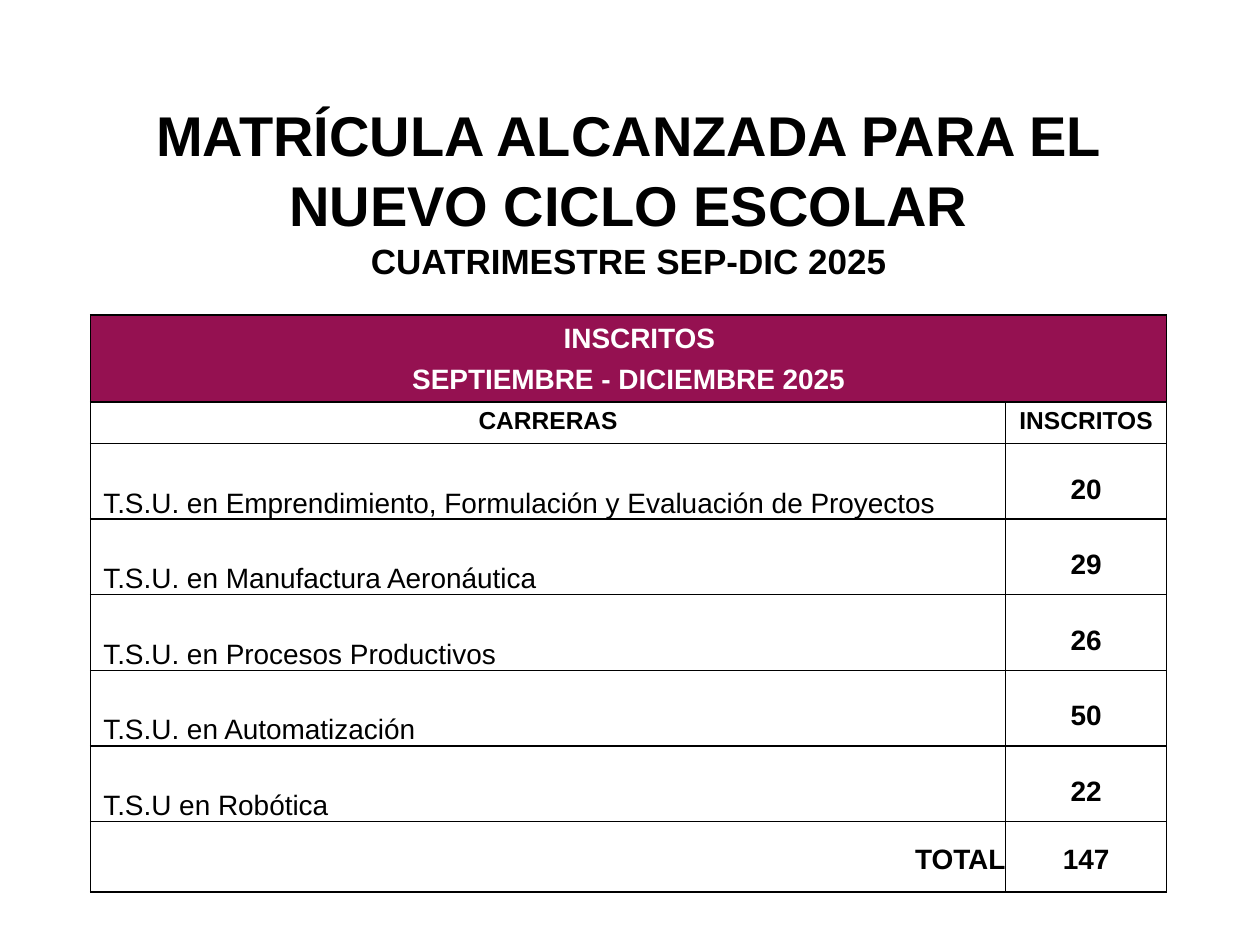
from lxml import etree
from pptx import Presentation
from pptx.dml.color import RGBColor
from pptx.enum.text import MSO_ANCHOR, MSO_AUTO_SIZE, PP_ALIGN
from pptx.oxml.ns import qn
from pptx.util import Inches, Pt

LEFT, MID, RIGHT = PP_ALIGN.LEFT, PP_ALIGN.CENTER, PP_ALIGN.RIGHT
TOP, CENTER, BASE = MSO_ANCHOR.TOP, MSO_ANCHOR.MIDDLE, MSO_ANCHOR.BOTTOM
BLACK = RGBColor(0, 0, 0)
WHITE = RGBColor(255, 255, 255)
WINE = RGBColor(0x95, 0x11, 0x51)

COURSES = [
    ("T.S.U. en Emprendimiento, Formulación y Evaluación de Proyectos", 20),
    ("T.S.U. en Manufactura Aeronáutica", 29),
    ("T.S.U. en Procesos Productivos", 26),
    ("T.S.U. en Automatización", 50),
    ("T.S.U en Robótica", 22),
]


class Deck:
    font = "Arial"

    def __init__(self):
        self.prs = Presentation()
        self.prs.slide_width, self.prs.slide_height = Inches(10), Inches(7.5)
        self.slide = self.prs.slides.add_slide(self.prs.slide_layouts[5])

    def style(self, par, size, color=BLACK, bold=True, align=MID):
        par.alignment = align
        for run in par.runs:
            font = run.font
            font.name, font.size, font.bold = self.font, Pt(size), bold
            font.color.rgb = color

    def title(self, lines, sizes, left, top, width, height):
        shape = self.slide.shapes.title
        shape.left, shape.top = Inches(left), Inches(top)
        shape.width, shape.height = Inches(width), Inches(height)
        frame = shape.text_frame
        frame.text = "\n".join(lines)
        frame.word_wrap = True
        frame.auto_size = MSO_AUTO_SIZE.NONE
        frame.vertical_anchor = TOP
        frame.margin_left = frame.margin_right = frame.margin_bottom = 0
        frame.margin_top = Inches(0.03)
        for par, size in zip(frame.paragraphs, sizes):
            self.style(par, size)
            par.line_spacing = 1.04

    def table(self, left, top, cols, rows):
        frame = self.slide.shapes.add_table(
            len(rows), len(cols), Inches(left), Inches(top),
            Inches(sum(cols)), Inches(sum(rows)))
        table = frame.table
        for col, width in zip(table.columns, cols):
            col.width = Inches(width)
        for row, height in zip(table.rows, rows):
            row.height = Inches(height)
        for cell in table.iter_cells():
            self.border(cell)
            cell.fill.background()
        return table

    def border(self, cell):
        """Draw a thin black line on all four sides."""
        props = cell._tc.get_or_add_tcPr()
        for side in ("lnL", "lnR", "lnT", "lnB"):
            line = etree.SubElement(props, qn(f"a:{side}"), w=str(Pt(1)))
            fill = etree.SubElement(line, qn("a:solidFill"))
            etree.SubElement(fill, qn("a:srgbClr"), val=str(BLACK))

    def cell(self, cell, text, size=16, color=BLACK, bold=True, align=MID,
             anchor=CENTER, left=0, top=0):
        cell.margin_left, cell.margin_top = Inches(left), Inches(top)
        cell.margin_right = cell.margin_bottom = 0
        cell.vertical_anchor = anchor
        cell.text_frame.text = text
        for par in cell.text_frame.paragraphs:
            self.style(par, size, color, bold, align)


def main():
    deck = Deck()
    deck.title(["MATRÍCULA ALCANZADA PARA EL NUEVO CICLO ESCOLAR",
                "CUATRIMESTRE SEP-DIC 2025"], [32, 20], 0.61, 0.75, 8.76, 1.43)

    rows = [0.69, 0.33] + [0.6] * len(COURSES) + [0.56]
    table = deck.table(0.72, 2.5, [7.26, 1.28], rows)

    head = table.cell(0, 0)
    head.merge(table.cell(0, 1))
    head.fill.solid()
    head.fill.fore_color.rgb = WINE
    deck.cell(head, "INSCRITOS\nSEPTIEMBRE - DICIEMBRE 2025",
              color=WHITE, anchor=TOP, top=0.07)
    first, second = head.text_frame.paragraphs
    first._p.get_or_add_pPr().set("marL", str(Inches(0.17)))
    second.space_before = Pt(5.2)

    for col, name in enumerate(["CARRERAS", "INSCRITOS"]):
        deck.cell(table.cell(1, col), name, 14, anchor=TOP, top=0.04)

    for row, (course, count) in enumerate(COURSES, 2):
        deck.cell(table.cell(row, 0), course, bold=False, align=LEFT,
                  anchor=BASE, left=0.1)
        deck.cell(table.cell(row, 1), str(count), top=0.13)

    last = len(rows) - 1
    total = sum(count for _, count in COURSES)
    deck.cell(table.cell(last, 0), "TOTAL", align=RIGHT, top=0.05)
    deck.cell(table.cell(last, 1), str(total), top=0.05)
    deck.prs.save("out.pptx")


if __name__ == "__main__":
    main()
